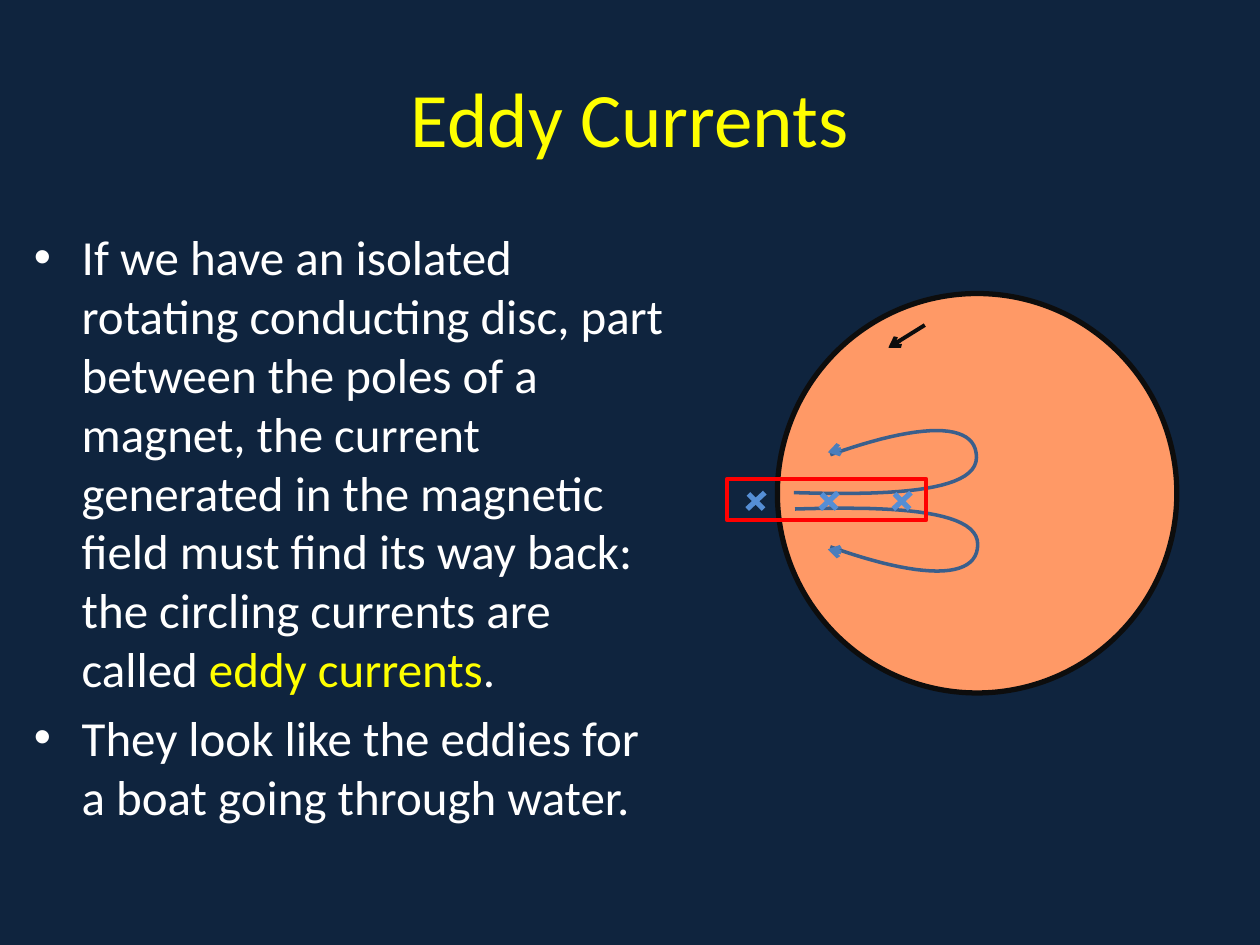
"""Build a slide that shows eddy currents in a disc turning through a magnet."""
import pptx
import pptx.util
import pptx.dml.color
import pptx.enum.shapes
import pptx.enum.text
import pptx.oxml
import pptx.oxml.ns
import lxml.etree

Inches, Pt = pptx.util.Inches, pptx.util.Pt
Shape = pptx.enum.shapes.MSO_SHAPE
qn = pptx.oxml.ns.qn


def color(text):
    return pptx.dml.color.RGBColor.from_string(text)


def draw_line(start, end, tone, width, arrow=False):
    line = slide.shapes.add_connector(
        pptx.enum.shapes.MSO_CONNECTOR.STRAIGHT,
        *[Inches(value) for value in start + end])
    line.line.color.rgb = color(tone)
    line.line.width = Pt(width)
    props = line._element.spPr
    if arrow:
        lxml.etree.SubElement(props.find(qn("a:ln")), qn("a:tailEnd"), type="arrow")
    lxml.etree.SubElement(props, qn("a:effectLst"))


deck = pptx.Presentation()
deck.slide_width, deck.slide_height = Inches(10), Inches(7.5)
slide = deck.slides.add_slide(deck.slide_layouts[5])
slide.background.fill.solid()
slide.background.fill.fore_color.rgb = color("0F243E")

title = slide.shapes.title
title.left, title.top = Inches(0.5), Inches(0.3)
title.width, title.height = Inches(9), Inches(1.25)
title.text_frame.text = "Eddy Currents"
title.text_frame.vertical_anchor = pptx.enum.text.MSO_ANCHOR.MIDDLE
head = title.text_frame.paragraphs[0]
head.alignment = pptx.enum.text.PP_ALIGN.CENTER
head.font.size, head.font.name = Pt(44), "Calibri"
head.font.color.rgb = color("FFFF00")

points = [
    [("If we have an isolated rotating conducting disc, part between the poles "
      "of a magnet, the current generated in the magnetic field must find its "
      "way back: the circling currents are called ", "FFFFFF"),
     ("eddy currents", "FFFF00"), (".", "FFFFFF")],
    [("They look like the eddies for a boat going through water.", "FFFFFF")],
]
body = slide.shapes.add_textbox(Inches(0.17), Inches(1.75), Inches(5.25), Inches(4.95))
frame = body.text_frame
frame.word_wrap = True
for index, parts in enumerate(points):
    para = frame.add_paragraph() if index else frame.paragraphs[0]
    para.font.size, para.font.name = Pt(28), "Calibri"
    para.space_before = Pt(5.6)
    props = para._p.get_or_add_pPr()
    props.set("marL", str(Inches(0.38)))
    props.set("indent", str(Inches(-0.38)))
    place = props.find(qn("a:defRPr"))
    place.addprevious(lxml.etree.Element(qn("a:buFont"), typeface="Arial"))
    place.addprevious(lxml.etree.Element(qn("a:buChar"), char="•"))
    for text, tone in parts:
        run = para.add_run()
        run.text = text
        run.font.color.rgb = color(tone)

disc = slide.shapes.add_shape(
    Shape.OVAL, Inches(6.17), Inches(2.33), Inches(3.17), Inches(3.17))
disc.shadow.inherit = False
disc.fill.solid()
disc.fill.fore_color.rgb = color("FF9966")
disc.line.color.rgb = color("0D0D0D")
disc.line.width = Pt(3)

upper = [(6.3, 3.91), (6.98, 3.93), (7.75, 3.92), (7.75, 3.63),
         (7.75, 3.34), (7.29, 3.36), (6.59, 3.61)]
lower = [(6.31, 4.04), (6.99, 4.02), (7.76, 4.03), (7.76, 4.32),
         (7.76, 4.61), (7.29, 4.59), (6.59, 4.34)]
steps = 24
for curve, start, end in [(upper, (6.65, 3.57), (6.57, 3.59)),
                          (lower, (6.66, 4.38), (6.57, 4.36))]:
    trail = []
    for first in (0, 3):
        for step in range(1, steps + 1):
            t = step / steps
            shares = [(1 - t) ** 3, 3 * t * (1 - t) ** 2, 3 * t * t * (1 - t), t ** 3]
            trail.append([Inches(sum(share * point[axis] for share, point
                                     in zip(shares, curve[first:first + 4])))
                          for axis in (0, 1)])
    path = slide.shapes.build_freeform(*[Inches(value) for value in curve[0]])
    path.add_line_segments(trail, close=False)
    loop = path.convert_to_shape()
    loop.shadow.inherit = False
    loop.fill.background()
    loop.line.color.rgb = color("3A5F8C")
    loop.line.width = Pt(2)
    draw_line(start, end, "4B7EBC", 2.25, arrow=True)

magnet = slide.shapes.add_shape(
    Shape.RECTANGLE, Inches(5.77), Inches(3.8), Inches(1.58), Inches(0.33))
magnet.shadow.inherit = False
magnet.fill.background()
magnet.line.color.rgb = color("FF0000")
magnet.line.width = Pt(2.25)

draw_line((7.34, 2.58), (7.05, 2.76), "0D0D0D", 2.25, arrow=True)

for column in range(3):
    left = 5.94 + 0.58 * column
    draw_line((left, 3.92), (left + 0.12, 4.04), "558ED5", 3)
    draw_line((left + 0.13, 3.91), (left - 0.01, 4.04), "558ED5", 3)

deck.save("out.pptx")
